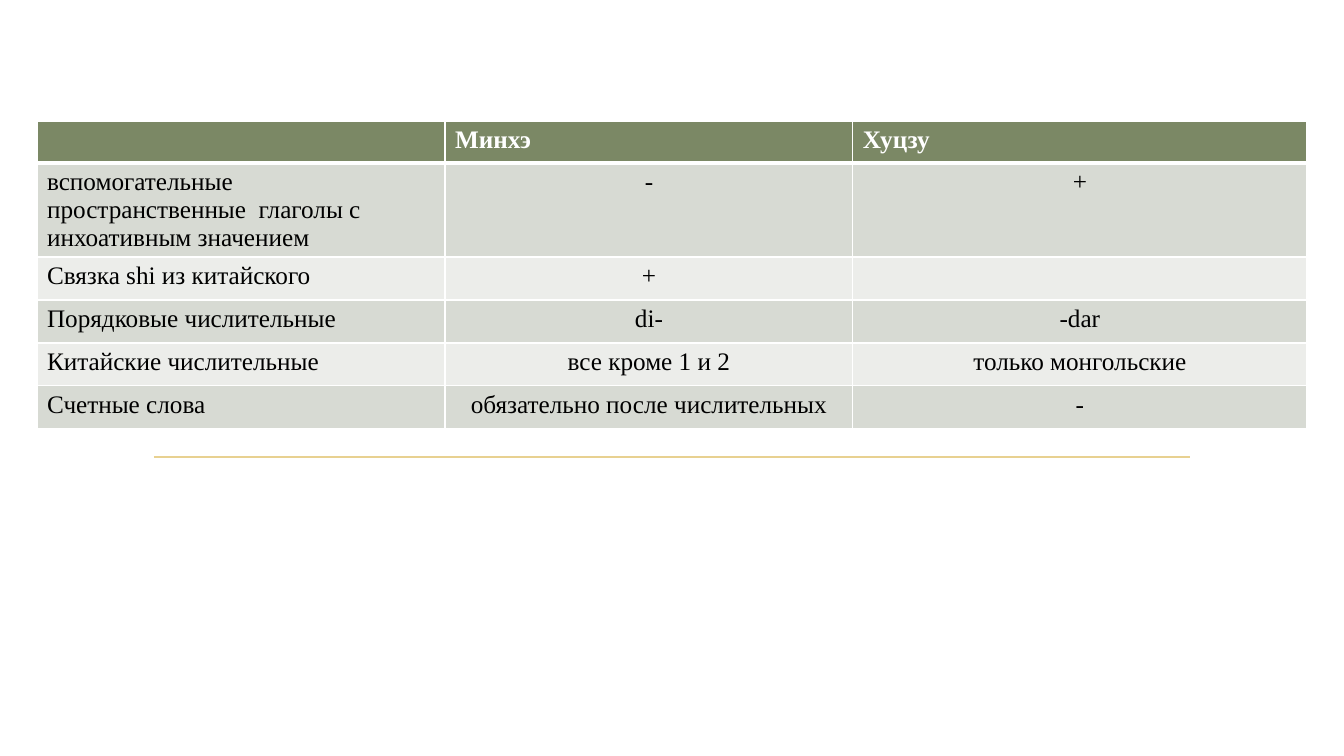
"""Build a slide with a table comparing the Minhe and Huzu dialects."""
import pptx
import pptx.dml.color
import pptx.enum.shapes
import pptx.enum.text
import pptx.oxml
import pptx.oxml.ns
import pptx.util

DIALECT_ROWS = [
    ("", "Минхэ", "Хуцзу"),
    ("вспомогательные пространственные  глаголы с инхоативным значением", "-", "+"),
    ("Связка shi из китайского", "+", ""),
    ("Порядковые числительные", "di-", "-dar"),
    ("Китайские числительные", "все кроме 1 и 2", "только монгольские"),
    ("Счетные слова", "обязательно после числительных", "-"),
]
COLUMN_WIDTHS = [408, 408, 454]
ROW_HEIGHTS = [42, 94, 43, 43, 43, 43]
TABLE_LEFT, TABLE_TOP = 37, 121
RULE_LEFT, RULE_RIGHT, RULE_TOP = 154, 1190, 457
HEADER_FILL, BAND_FILLS = "7B8865", ["ECEDEA", "D7DAD3"]
HEADER_FORMAT = {"name": "Times New Roman", "size": pptx.util.Pt(18), "bold": True}
BODY_FORMAT = {**HEADER_FORMAT, "bold": False}


def px(length):
    return pptx.util.Emu(round(length * 914400 / 100.8))


def color(hex_code):
    return pptx.dml.color.RGBColor.from_string(hex_code)


def add_borders(cell, widths):
    properties = cell._tc.get_or_add_tcPr()
    for side, points in widths.items():
        properties.append(pptx.oxml.parse_xml(
            f'<a:ln{side} {pptx.oxml.ns.nsdecls("a")} w="{pptx.util.Pt(points)}">'
            f'<a:solidFill><a:srgbClr val="FFFFFF"/></a:solidFill></a:ln{side}>'))


def fill_cell(cell, text, row, column):
    header = row == 0
    add_borders(cell, {"L": 1, "R": 1, "T": 3 if row == 1 else 1, "B": 3 if header else 1})
    cell.fill.solid()
    cell.fill.fore_color.rgb = color(HEADER_FILL if header else BAND_FILLS[row % 2])
    cell.text = text
    paragraph = cell.text_frame.paragraphs[0]
    if not header and column:
        paragraph.alignment = pptx.enum.text.PP_ALIGN.CENTER
    for font in [paragraph.font] + [run.font for run in paragraph.runs]:
        for attribute, value in (HEADER_FORMAT if header else BODY_FORMAT).items():
            setattr(font, attribute, value)
        font.color.rgb = color("FFFFFF" if header else "000000")


def add_rule(slide):
    rule = slide.shapes.add_connector(
        pptx.enum.shapes.MSO_CONNECTOR.STRAIGHT,
        px(RULE_LEFT), px(RULE_TOP), px(RULE_RIGHT), px(RULE_TOP))
    rule.line.color.rgb = color("E8D191")
    rule.line.width = pptx.util.Pt(1.25)
    rule._element.spPr.append(pptx.oxml.parse_xml(
        f'<a:effectLst {pptx.oxml.ns.nsdecls("a")}/>'))


def add_dialect_table(slide):
    dialects = slide.shapes.add_table(
        len(ROW_HEIGHTS), len(COLUMN_WIDTHS), px(TABLE_LEFT), px(TABLE_TOP),
        px(sum(COLUMN_WIDTHS)), px(sum(ROW_HEIGHTS))).table
    for column, width in zip(dialects.columns, COLUMN_WIDTHS):
        column.width = px(width)
    for row, height in zip(dialects.rows, ROW_HEIGHTS):
        row.height = px(height)
    for row, texts in enumerate(DIALECT_ROWS):
        for column, text in enumerate(texts):
            fill_cell(dialects.cell(row, column), text, row, column)


def main():
    presentation = pptx.Presentation()
    presentation.slide_width, presentation.slide_height = px(1344), px(756)
    slide = presentation.slides.add_slide(presentation.slide_layouts[6])
    add_rule(slide)
    add_dialect_table(slide)
    presentation.save("out.pptx")


if __name__ == "__main__":
    main()
